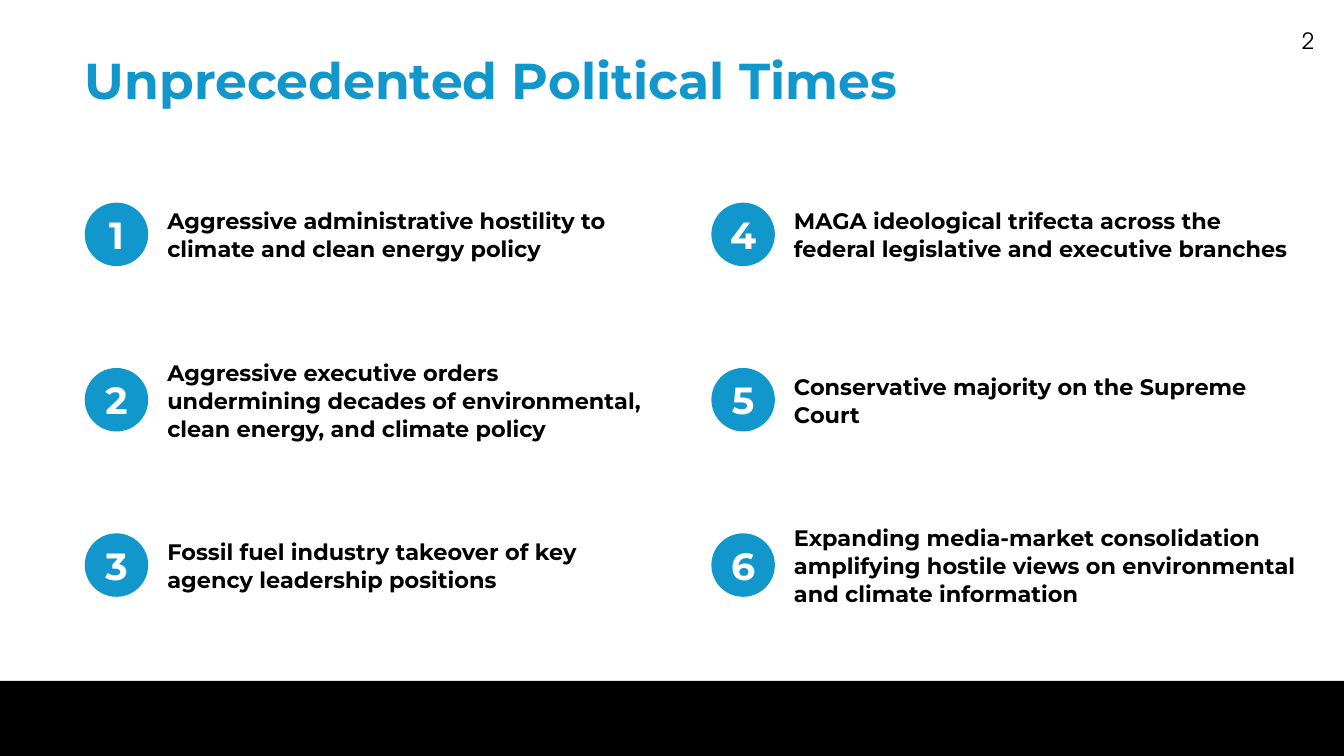
from pptx import Presentation
from pptx.dml.color import RGBColor
from pptx.enum.shapes import MSO_SHAPE
from pptx.enum.text import MSO_ANCHOR, MSO_AUTO_SIZE, PP_ALIGN
from pptx.util import Pt

OVAL = MSO_SHAPE.OVAL
RECTANGLE = MSO_SHAPE.RECTANGLE
TOP, MIDDLE = MSO_ANCHOR.TOP, MSO_ANCHOR.MIDDLE
LEFT, CENTER, RIGHT = PP_ALIGN.LEFT, PP_ALIGN.CENTER, PP_ALIGN.RIGHT
NO_AUTOFIT = MSO_AUTO_SIZE.NONE

BLUE, BLACK, WHITE = "1297CC", "000000", "FFFFFF"
HEADING_FONT = "Montserrat"
NUMBER_FONT = "TeX Gyre Adventor"

FIRST_X, FIRST_Y = 121, 289.5
COLUMN_STEP, ROW_STEP = 895, 236.2
BADGE_SIZE = 90.7
TEXT_OFFSET, TEXT_HEIGHT = 118, 212.4

# Each column: width of its texts, then the texts from top to bottom.
COLUMNS = [
    (684.7, [
        "Aggressive administrative hostility to climate and clean energy policy",
        "Aggressive executive orders undermining decades of environmental, "
        "clean energy, and climate policy",
        "Fossil fuel industry takeover of key agency leadership positions",
    ]),
    (724.3, [
        "MAGA ideological trifecta across the federal legislative and executive branches",
        "Conservative majority on the Supreme Court",
        "Expanding media-market consolidation amplifying hostile views on "
        "environmental and climate information",
    ]),
]


def color(value):
    return RGBColor.from_string(value)


def place(shape, left, top, width, height):
    shape.left, shape.top = Pt(left), Pt(top)
    shape.width, shape.height = Pt(width), Pt(height)


def write(shape, text, *, size, fill=BLACK, font=HEADING_FONT, bold=True,
          align=LEFT, anchor=MIDDLE, margins=(0, 0), spacing=None):
    """Fill a shape with one paragraph; margins are (horizontal, vertical)."""
    frame = shape.text_frame
    frame.word_wrap = True
    frame.auto_size = NO_AUTOFIT
    frame.vertical_anchor = anchor
    frame.margin_left = frame.margin_right = Pt(margins[0])
    frame.margin_top = frame.margin_bottom = Pt(margins[1])
    para = frame.paragraphs[0]
    para.alignment = align
    if spacing:
        para.line_spacing = spacing
    span = para.add_run()
    span.text = text
    span.font.name = font
    span.font.size = Pt(size)
    span.font.bold = bold
    span.font.color.rgb = color(fill)


def add_text(page, left, top, width, height, text, **style):
    box = page.shapes.add_textbox(Pt(left), Pt(top), Pt(width), Pt(height))
    write(box, text, **style)


def add_filled(page, kind, left, top, width, height, fill):
    shape = page.shapes.add_shape(kind, Pt(left), Pt(top), Pt(width), Pt(height))
    shape.shadow.inherit = False
    shape.fill.solid()
    shape.fill.fore_color.rgb = color(fill)
    shape.line.fill.background()
    return shape


def add_title(page, text):
    title = page.shapes.title
    place(title, 121, 67, 1676.9, 118)
    write(title, text, size=72, fill=BLUE, anchor=TOP, margins=(0, 3.6))


def add_numbered_point(page, left, top, width, number, text):
    badge = add_filled(page, OVAL, left, top, BADGE_SIZE, BADGE_SIZE, BLUE)
    write(badge, str(number), size=54, fill=WHITE, align=CENTER)
    text_top = top + (BADGE_SIZE - TEXT_HEIGHT) / 2
    add_text(page, left + TEXT_OFFSET, text_top, width, TEXT_HEIGHT, text,
             size=32, spacing=1.04)


def main():
    deck = Presentation()
    deck.slide_width, deck.slide_height = Pt(1919.5), Pt(1080)
    page = deck.slides.add_slide(deck.slide_layouts[5])
    page.background.fill.solid()
    page.background.fill.fore_color.rgb = color(WHITE)

    add_text(page, 1767.6, 31, 123.8, 53.3, "2", size=32, font=NUMBER_FONT,
             bold=False, align=RIGHT, anchor=TOP, margins=(14.4, 7.2))
    add_filled(page, RECTANGLE, -10, 972.7, 1936, 123.8, BLACK)
    add_title(page, "Unprecedented Political Times")

    number = 1
    for column, (width, texts) in enumerate(COLUMNS):
        for row, text in enumerate(texts):
            add_numbered_point(page, FIRST_X + column * COLUMN_STEP,
                               FIRST_Y + row * ROW_STEP, width, number, text)
            number += 1

    deck.save("out.pptx")


if __name__ == "__main__":
    main()
